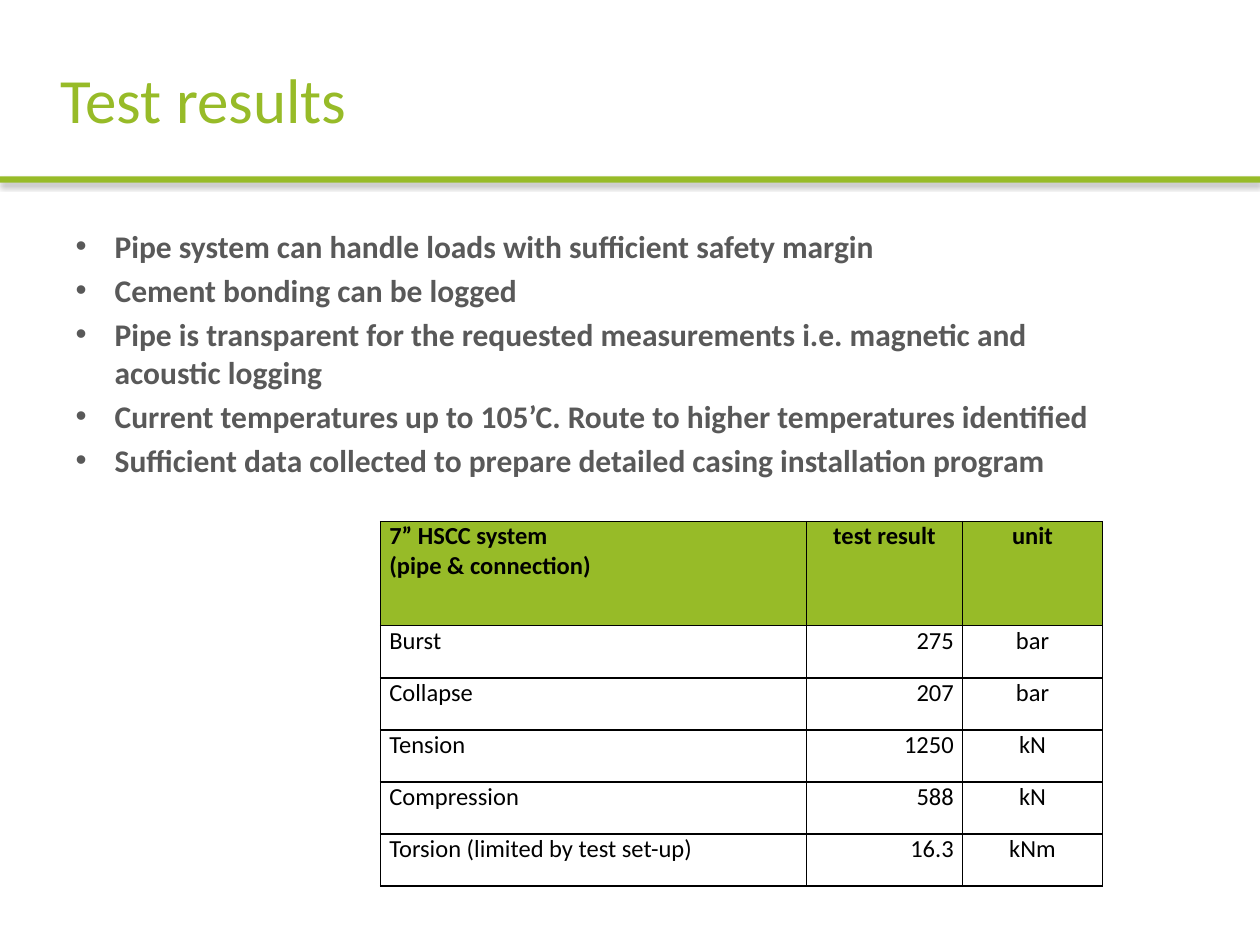
import pptx
import pptx.dml.color
import pptx.enum.shapes
import pptx.enum.text
import pptx.oxml
import pptx.oxml.ns
import pptx.util
from pptx.util import Inches

GREEN, GREY, BLACK = "97BB28", "595959", "000000"
FONT = "Calibri"
NAMESPACE = pptx.oxml.ns.nsdecls("a")
ALIGN = pptx.enum.text.PP_ALIGN

HEADING = "Test results"
FINDINGS = [
    "Pipe system can handle loads with sufficient safety margin",
    "Cement bonding can be logged",
    "Pipe is transparent for the requested measurements i.e. magnetic and acoustic logging",
    "Current temperatures up to 105’C. Route to higher temperatures identified",
    "Sufficient data collected to prepare detailed casing installation program",
]
RESULTS = [
    (("7” HSCC system", "(pipe & connection)"), ("test result",), ("unit",)),
    (("Burst",), ("275",), ("bar",)),
    (("Collapse",), ("207",), ("bar",)),
    (("Tension",), ("1250",), ("kN",)),
    (("Compression",), ("588",), ("kN",)),
    (("Torsion (limited by test set-up)",), ("16.3",), ("kNm",)),
]
COLUMN_WIDTHS = [3.38, 1.24, 1.11]
HEADER_ALIGN = [ALIGN.LEFT, ALIGN.CENTER, ALIGN.CENTER]
VALUE_ALIGN = [ALIGN.LEFT, ALIGN.RIGHT, ALIGN.CENTER]
ROW_HEIGHT = 0.413


def colour(value):
    return pptx.dml.color.RGBColor.from_string(value)


def place(shape, left, top, width, height):
    shape.left, shape.top = Inches(left), Inches(top)
    shape.width, shape.height = Inches(width), Inches(height)


def write(paragraph, text, size, ink, bold=False):
    run = paragraph.add_run()
    run.text = text
    run.font.name = FONT
    run.font.size = pptx.util.Pt(size)
    run.font.bold = bold
    run.font.color.rgb = colour(ink)


def add_rule(slide):
    rule = slide.shapes.add_shape(
        pptx.enum.shapes.MSO_SHAPE.RECTANGLE, 0, Inches(1.4), Inches(10), Inches(0.05))
    rule.fill.solid()
    rule.fill.fore_color.rgb = colour(GREEN)
    rule.line.fill.background()
    rule.shadow.inherit = False
    effects = rule.element.spPr.find(pptx.oxml.ns.qn("a:effectLst"))
    effects.append(pptx.oxml.parse_xml(
        f'<a:outerShdw {NAMESPACE} blurRad="{pptx.util.Pt(3.1)}" dist="{pptx.util.Pt(1.8)}" '
        f'dir="5400000" rotWithShape="0"><a:srgbClr val="{BLACK}"><a:alpha val="35000"/>'
        '</a:srgbClr></a:outerShdw>'))


def add_heading(title):
    place(title, 0.38, 0.3, 6.39, 0.96)
    title.text_frame.vertical_anchor = pptx.enum.text.MSO_ANCHOR.MIDDLE
    paragraph = title.text_frame.paragraphs[0]
    paragraph.alignment = ALIGN.LEFT
    write(paragraph, HEADING, 36, GREEN)


def add_findings(body):
    place(body, 0.5, 1.75, 8.54, 2.16)
    frame = body.text_frame
    frame.auto_size = pptx.enum.text.MSO_AUTO_SIZE.SHAPE_TO_FIT_TEXT
    for index, finding in enumerate(FINDINGS):
        paragraph = frame.add_paragraph() if index else frame.paragraphs[0]
        properties = paragraph._p.get_or_add_pPr()
        properties.set("marL", str(Inches(0.31)))
        properties.set("indent", str(Inches(-0.31)))
        properties.append(pptx.oxml.parse_xml(f'<a:buChar {NAMESPACE} char="•"/>'))
        paragraph.space_before = pptx.util.Pt(3.6 if index else 0)
        write(paragraph, finding, 18, GREY, True)


def add_borders(cell):
    for side in ("lnL", "lnR", "lnT", "lnB"):
        cell._tc.get_or_add_tcPr().append(pptx.oxml.parse_xml(
            f'<a:{side} {NAMESPACE} w="{pptx.util.Pt(1)}"><a:solidFill>'
            f'<a:srgbClr val="{BLACK}"/></a:solidFill></a:{side}>'))


def fill_cell(cell, lines, alignment, is_header):
    cell.margin_left = cell.margin_right = Inches(0.07)
    cell.margin_top = cell.margin_bottom = 0
    add_borders(cell)
    if is_header:
        cell.fill.solid()
        cell.fill.fore_color.rgb = colour(GREEN)
    else:
        cell.fill.background()
    for index, line in enumerate(lines):
        frame = cell.text_frame
        paragraph = frame.add_paragraph() if index else frame.paragraphs[0]
        paragraph.alignment = alignment
        write(paragraph, line, 14, BLACK, is_header)


def add_results(slide):
    heights = [2 * ROW_HEIGHT] + [ROW_HEIGHT] * (len(RESULTS) - 1)
    table = slide.shapes.add_table(
        len(RESULTS), len(COLUMN_WIDTHS), Inches(3.02), Inches(4.14),
        Inches(sum(COLUMN_WIDTHS)), Inches(sum(heights))).table
    table.horz_banding = False
    for column, width in zip(table.columns, COLUMN_WIDTHS):
        column.width = Inches(width)
    for row_index, (row, height) in enumerate(zip(RESULTS, heights)):
        table.rows[row_index].height = Inches(height)
        alignments = VALUE_ALIGN if row_index else HEADER_ALIGN
        for column_index, lines in enumerate(row):
            fill_cell(table.cell(row_index, column_index), lines,
                      alignments[column_index], row_index == 0)


def main():
    deck = pptx.Presentation()
    deck.slide_width, deck.slide_height = Inches(10), Inches(7.5)
    slide = deck.slides.add_slide(deck.slide_layouts[1])
    add_rule(slide)
    add_heading(slide.shapes.title)
    add_findings(slide.placeholders[1])
    add_results(slide)
    deck.save("out.pptx")


if __name__ == "__main__":
    main()
